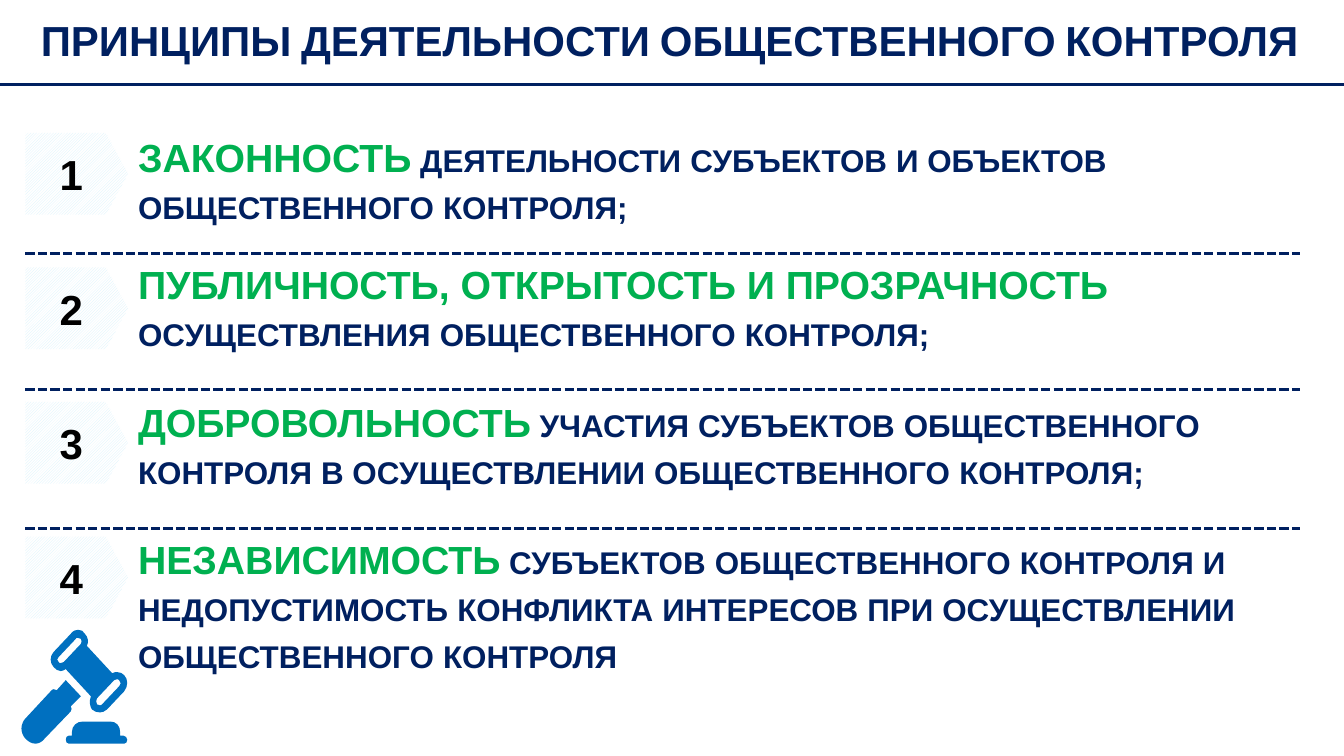
from lxml import etree
from pptx import Presentation
from pptx.dml.color import RGBColor
from pptx.enum.dml import MSO_LINE, MSO_PATTERN
from pptx.enum.shapes import MSO_CONNECTOR, MSO_SHAPE
from pptx.enum.text import MSO_ANCHOR, MSO_AUTO_SIZE, PP_ALIGN
from pptx.oxml.ns import qn
from pptx.util import Cm, Pt

NAVY = RGBColor(0x00, 0x20, 0x60)
GREEN = RGBColor(0x00, 0xB0, 0x50)
BLUE = RGBColor(0x00, 0x70, 0xC0)
PALE_BLUE = RGBColor(0xD5, 0xF2, 0xFC)
WHITE = RGBColor(0xFF, 0xFF, 0xFF)
BLACK = RGBColor(0x00, 0x00, 0x00)
FONT = "Arial"

SLIDE_WIDTH, SLIDE_HEIGHT = Cm(33.87), Cm(19.05)
TITLE = "ПРИНЦИПЫ ДЕЯТЕЛЬНОСТИ ОБЩЕСТВЕННОГО КОНТРОЛЯ"
# Text top, text width, key words, lines of the explanation
PRINCIPLES = [
    (Cm(3.24), Cm(30.35), "ЗАКОННОСТЬ",
     [" деятельности субъектов и объектов общественного контроля;"]),
    (Cm(6.44), Cm(30.35), "ПУБЛИЧНОСТЬ, ОТКРЫТОСТЬ И ПРОЗРАЧНОСТЬ",
     [" осуществления общественного контроля;"]),
    (Cm(9.91), Cm(30.35), "ДОБРОВОЛЬНОСТЬ",
     [" участия субъектов общественного контроля в осуществлении общественного контроля;"]),
    (Cm(13.36), Cm(28.85), "НЕЗАВИСИМОСТЬ",
     [" субъектов общественного контроля и",
      "недопустимость конфликта интересов при осуществлении",
      "общественного контроля"]),
]
DIVIDER_TOPS = [Cm(6.39), Cm(9.82), Cm(13.32)]

# Gavel outlines in hundredths of an inch from the icon's corner:
# two numbers are a corner, six are a Bézier curve.
GAVEL_HEAD = [
    [(56, 8), (57, 8, 58, 8, 59, 9), (60, 10, 60, 13, 59, 14), (42, 32),
     (41, 33, 40, 33, 39, 33), (38, 33, 37, 33, 37, 32), (35, 31, 35, 28, 37, 27),
     (54, 9), (54, 8, 55, 8, 56, 8)],
    [(95, 49), (96, 49, 97, 50, 97, 50), (99, 52, 99, 54, 97, 56), (80, 74),
     (80, 74, 79, 75, 78, 75), (77, 75, 76, 74, 75, 74), (74, 72, 74, 70, 75, 68),
     (92, 50), (93, 50, 94, 49, 95, 49)],
    [(56, 0), (54, 0, 51, 1, 49, 4), (32, 22), (28, 26, 28, 33, 32, 37),
     (34, 39, 36, 41, 39, 41), (41, 41, 42, 40, 44, 39), (69, 66),
     (67, 71, 68, 76, 70, 79), (72, 81, 75, 82, 78, 82), (80, 82, 83, 81, 85, 79),
     (102, 61), (106, 56, 106, 49, 102, 45), (100, 43, 98, 42, 95, 42),
     (94, 42, 92, 42, 90, 43), (65, 16), (67, 12, 66, 7, 63, 4), (62, 1, 59, 0, 56, 0)],
]
GAVEL_HANDLE = [
    [(44, 50), (35, 60), (34, 60, 33, 59, 32, 59), (31, 59, 30, 60, 30, 60), (4, 88),
     (2, 90, 0, 94, 0, 98), (0, 102, 2, 106, 4, 108), (7, 111, 10, 113, 14, 113),
     (17, 113, 21, 111, 23, 108), (49, 81), (50, 80, 50, 77, 49, 76), (59, 66)],
]
GAVEL_STAND = [
    [(61, 91), (55, 91, 50, 95, 50, 102), (50, 105), (47, 105),
     (45, 105, 44, 107, 44, 109), (44, 111, 45, 113, 47, 113), (102, 113),
     (104, 113, 105, 111, 105, 109), (105, 107, 103, 105, 101, 105), (98, 105),
     (98, 102), (98, 95, 94, 91, 88, 91)],
]


def style(font, size, color):
    font.name, font.size, font.bold = FONT, Pt(size), True
    font.color.rgb = color


def add_small_caps(para, text, size):
    span = para.add_run()
    span.text = text
    style(span.font, size, NAVY)
    span.font._element.set("cap", "small")


def add_rule(slide, left, top, right, dash=None):
    rule = slide.shapes.add_connector(MSO_CONNECTOR.STRAIGHT, left, top, right, top)
    rule.line.color.rgb = NAVY
    rule.line.width = Pt(2.25)
    if dash:
        rule.line.dash_style = dash
    etree.SubElement(rule._element.spPr, qn("a:effectLst"))


def fill_title(slide, left, top, width, height):
    title = slide.shapes.title
    title.left, title.top, title.width, title.height = left, top, width, height
    frame = title.text_frame
    frame.word_wrap, frame.auto_size = True, MSO_AUTO_SIZE.NONE
    frame.vertical_anchor = MSO_ANCHOR.MIDDLE
    frame.margin_left = frame.margin_top = frame.margin_bottom = Cm(0.13)
    frame.margin_right = Cm(0.25)
    para = frame.paragraphs[0]
    para.alignment = PP_ALIGN.CENTER
    add_small_caps(para, TITLE, 30)


def add_number(slide, number, left, top, width, height):
    plate = slide.shapes.add_shape(MSO_SHAPE.PENTAGON, left, top, width, height)
    plate.adjustments[0] = 0.27
    plate.shadow.inherit = False
    plate.line.fill.background()
    plate.fill.patterned()
    plate.fill.pattern = MSO_PATTERN.DARK_UPWARD_DIAGONAL
    plate.fill.fore_color.rgb, plate.fill.back_color.rgb = PALE_BLUE, WHITE
    frame = plate.text_frame
    frame.text = str(number)
    frame.vertical_anchor = MSO_ANCHOR.MIDDLE
    frame.margin_left = frame.margin_right = Cm(0.13)
    frame.margin_top = frame.margin_bottom = 0
    para = frame.paragraphs[0]
    para.alignment = PP_ALIGN.CENTER
    style(para.font, 30, BLACK)


def add_principle(slide, left, top, width, key_words, lines):
    height = Cm(3.84 if len(lines) > 1 else 2.64)
    frame = slide.shapes.add_textbox(left, top, width, height).text_frame
    frame.word_wrap, frame.auto_size = True, MSO_AUTO_SIZE.SHAPE_TO_FIT_TEXT
    first = frame.paragraphs[0]
    span = first.add_run()
    span.text = key_words
    style(span.font, 28, GREEN)
    add_small_caps(first, lines[0], 28)
    for line in lines[1:]:
        add_small_caps(frame.add_paragraph(), line, 28)


def bend_segments(shape, outlines):
    """Turn the straight segments that stand for curves into Bézier curves."""
    ends = [part[-2:] for outline in outlines for part in outline]
    min_x, min_y = (min(values) for values in zip(*ends))
    segments = [element for element in shape._element.iter(qn("a:moveTo"), qn("a:lnTo"))]
    parts = [part for outline in outlines for part in outline]
    for segment, part in zip(segments, parts):
        if len(part) == 6:
            curve = etree.Element(qn("a:cubicBezTo"))
            for x, y in zip(part[::2], part[1::2]):
                etree.SubElement(curve, qn("a:pt"), x=str(x - min_x), y=str(y - min_y))
            segment.getparent().replace(segment, curve)


def add_gavel(slide, left, top):
    unit = Cm(2.54) / 100
    group = slide.shapes.add_group_shape()
    for outlines in (GAVEL_HEAD, GAVEL_HANDLE, GAVEL_STAND):
        builder = group.shapes.build_freeform(*outlines[0][0], scale=unit)
        for index, outline in enumerate(outlines):
            if index:
                builder.move_to(*outline[0])
            builder.add_line_segments([part[-2:] for part in outline[1:]], close=True)
        shape = builder.convert_to_shape(left, top)
        bend_segments(shape, outlines)
        shape.shadow.inherit = False
        shape.fill.solid()
        shape.fill.fore_color.rgb = BLUE
        shape.line.fill.background()


def add_principles(slide, left, top, right):
    plate_width, plate_height, step = Cm(2.59), Cm(2.06), Cm(3.39)
    for index, (text_top, text_width, key_words, lines) in enumerate(PRINCIPLES):
        add_number(slide, index + 1, left, top + index * step, plate_width, plate_height)
        add_principle(slide, left + plate_width, text_top, text_width, key_words, lines)
    for divider_top in DIVIDER_TOPS:
        add_rule(slide, left, divider_top, right, MSO_LINE.SQUARE_DOT)


def main():
    deck = Presentation()
    deck.slide_width, deck.slide_height = SLIDE_WIDTH, SLIDE_HEIGHT
    slide = deck.slides.add_slide(deck.slide_layouts[5])
    fill_title(slide, 0, 0, SLIDE_WIDTH, Cm(1.98))
    add_rule(slide, 0, Cm(2.13), SLIDE_WIDTH)
    add_principles(slide, Cm(0.64), Cm(3.35), Cm(32.77))
    add_gavel(slide, Cm(0.54), Cm(15.87))
    deck.save("out.pptx")


if __name__ == "__main__":
    main()
